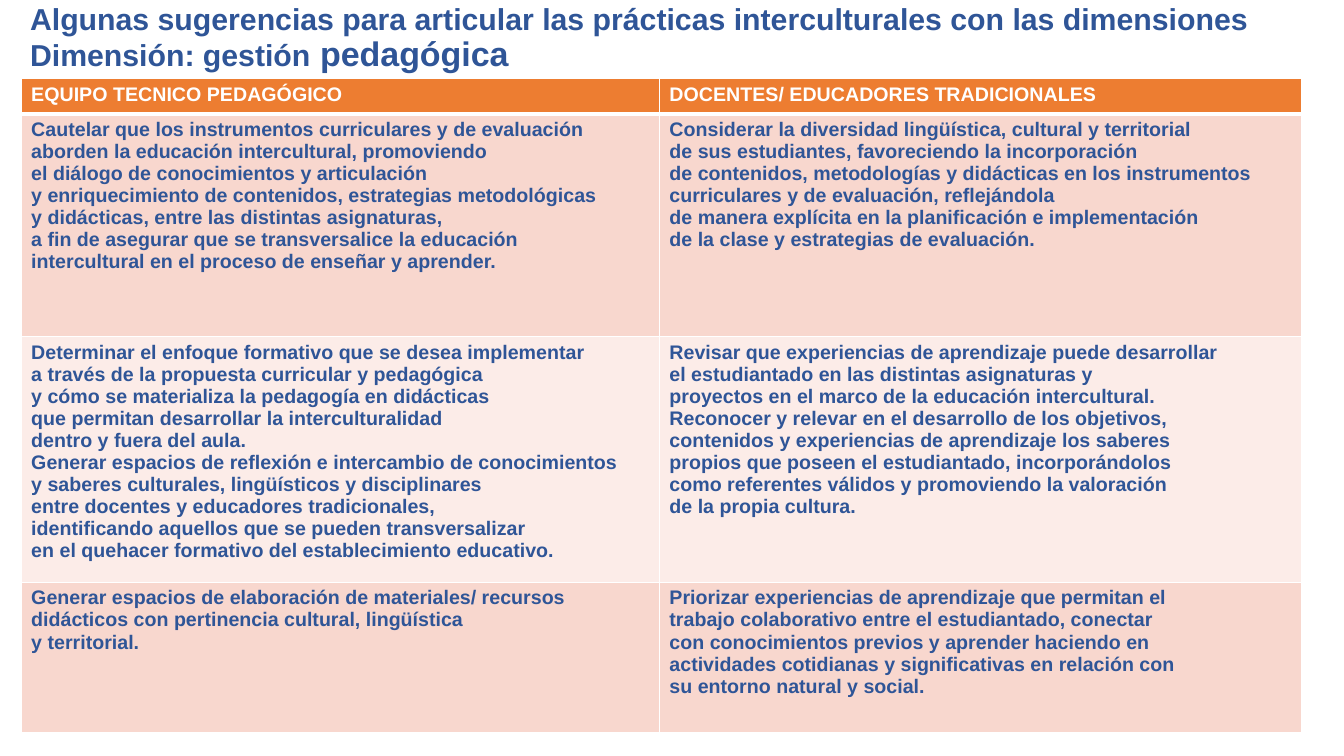
import pptx
import pptx.dml.color
import pptx.enum.text
import pptx.oxml
import pptx.oxml.ns
import pptx.util

Inches = pptx.util.Inches
Pt = pptx.util.Pt
RGBColor = pptx.dml.color.RGBColor

BLUE = RGBColor(0x2F, 0x55, 0x97)
ORANGE = RGBColor(0xED, 0x7D, 0x31)
PEACH = RGBColor(0xF8, 0xD7, 0xCE)
PALE_PEACH = RGBColor(0xFC, 0xEC, 0xE8)
WHITE = RGBColor(0xFF, 0xFF, 0xFF)

TITLE = [
    [("Algunas sugerencias para articular las prácticas interculturales con las dimensiones", 21.6)],
    [("Dimensión: gestión", 21.6), (" pedagógica", 24.3)],
]

ROWS = [
    ("EQUIPO TECNICO PEDAGÓGICO", "DOCENTES/ EDUCADORES TRADICIONALES"),
    (
        """Cautelar que los instrumentos curriculares y de evaluación
aborden la educación intercultural, promoviendo
el diálogo de conocimientos y articulación
y enriquecimiento de contenidos, estrategias metodológicas
y didácticas, entre las distintas asignaturas,
a fin de asegurar que se transversalice la educación
intercultural en el proceso de enseñar y aprender.""",
        """Considerar la diversidad lingüística, cultural y territorial
de sus estudiantes, favoreciendo la incorporación
de contenidos, metodologías y didácticas en los instrumentos
curriculares y de evaluación, reflejándola
de manera explícita en la planificación e implementación
de la clase y estrategias de evaluación.""",
    ),
    (
        """Determinar el enfoque formativo que se desea implementar
a través de la propuesta curricular y pedagógica
y cómo se materializa la pedagogía en didácticas
que permitan desarrollar la interculturalidad
dentro y fuera del aula.
Generar espacios de reflexión e intercambio de conocimientos
y saberes culturales, lingüísticos y disciplinares
entre docentes y educadores tradicionales,
identificando aquellos que se pueden transversalizar
en el quehacer formativo del establecimiento educativo.""",
        """Revisar que experiencias de aprendizaje puede desarrollar
el estudiantado en las distintas asignaturas y
proyectos en el marco de la educación intercultural.
Reconocer y relevar en el desarrollo de los objetivos,
contenidos y experiencias de aprendizaje los saberes
propios que poseen el estudiantado, incorporándolos
como referentes válidos y promoviendo la valoración
de la propia cultura.""",
    ),
    (
        """Generar espacios de elaboración de materiales/ recursos
didácticos con pertinencia cultural, lingüística
y territorial.""",
        """Priorizar experiencias de aprendizaje que permitan el
trabajo colaborativo entre el estudiantado, conectar
con conocimientos previos y aprender haciendo en
actividades cotidianas y significativas en relación con
su entorno natural y social.""",
    ),
]
COLUMN_WIDTHS = [6.33, 6.37]
ROW_HEIGHTS = [0.35, 2.21, 2.28, 1.49]


def add_run(p, text, size=14, color=BLUE, bold=True, font="Arial"):
    r = p.add_run()
    r.text = text
    r.font.name = font
    r.font.size = Pt(size)
    r.font.bold = bold
    r.font.color.rgb = color


def set_borders(cell, color, **widths):
    """Draw the cell's sides; widths are points keyed by L, R, T and B."""
    tc_pr = cell._tc.get_or_add_tcPr()
    for i, (side, width) in enumerate(widths.items()):
        ln = pptx.oxml.parse_xml(
            f'<a:ln{side} {pptx.oxml.ns.nsdecls("a")} w="{Pt(width)}"><a:solidFill>'
            f'<a:srgbClr val="{color}"/></a:solidFill></a:ln{side}>'
        )
        tc_pr.insert(i, ln)


class SlideBuilder:
    def __init__(self, slide, border_color=WHITE):
        self.slide = slide
        self.border_color = border_color

    def title(self, lines, left, top, width, height):
        sp = self.slide.shapes.add_textbox(Inches(left), Inches(top), Inches(width), Inches(height))
        tf = sp.text_frame
        tf.word_wrap = True
        tf.vertical_anchor = pptx.enum.text.MSO_ANCHOR.MIDDLE
        tf.margin_top = tf.margin_bottom = 0
        for i, line in enumerate(lines):
            p = tf.add_paragraph() if i else tf.paragraphs[0]
            p.line_spacing = 0.9
            for text, size in line:
                add_run(p, text, size=size)

    def table(self, rows, left, top, widths, heights):
        frame = self.slide.shapes.add_table(
            len(rows), len(widths), Inches(left), Inches(top),
            Inches(sum(widths)), Inches(sum(heights)),
        )
        table = frame.table
        for column, width in zip(table.columns, widths):
            column.width = Inches(width)
        for i, (row, height) in enumerate(zip(rows, heights)):
            table.rows[i].height = Inches(height)
            for j, text in enumerate(row):
                self.cell(table.cell(i, j), text, i)

    def cell(self, cell, text, row):
        header = row == 0
        cell.fill.solid()
        cell.fill.fore_color.rgb = ORANGE if header else PEACH if row % 2 else PALE_PEACH
        tf = cell.text_frame
        for i, line in enumerate(text.split("\n")):
            p = tf.add_paragraph() if i else tf.paragraphs[0]
            add_run(p, line, color=WHITE if header else BLUE)
        set_borders(cell, self.border_color, L=1, R=1,
                    T=3 if row == 1 else 1, B=3 if header else 1)


def main():
    prs = pptx.Presentation()
    prs.slide_width, prs.slide_height = Inches(13.33), Inches(7.5)
    s = SlideBuilder(prs.slides.add_slide(prs.slide_layouts[6]))
    s.title(TITLE, 0.2, 0.03, 12.7, 0.72)
    s.table(ROWS, 0.21, 0.78, COLUMN_WIDTHS, ROW_HEIGHTS)
    prs.save("out.pptx")


if __name__ == "__main__":
    main()
